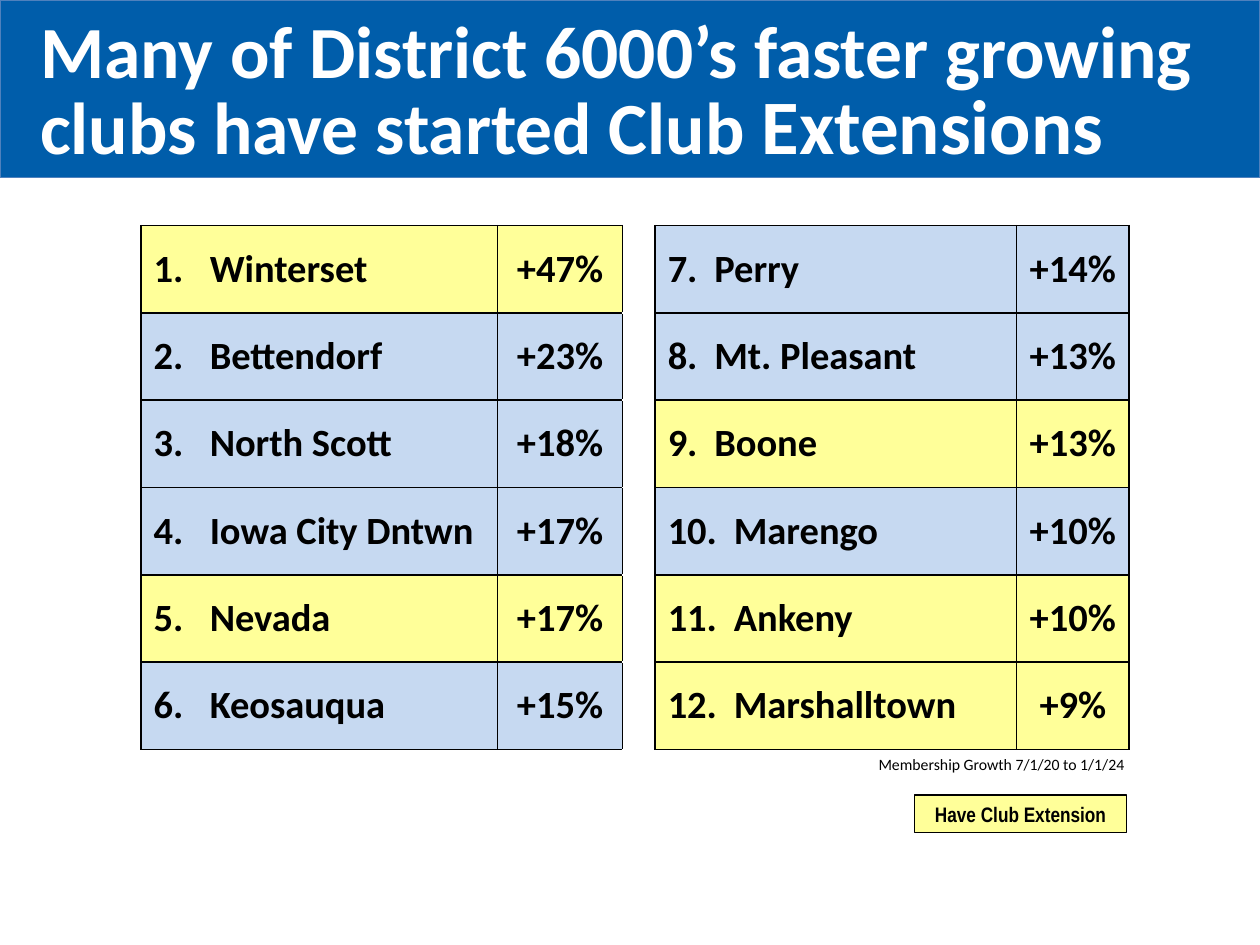
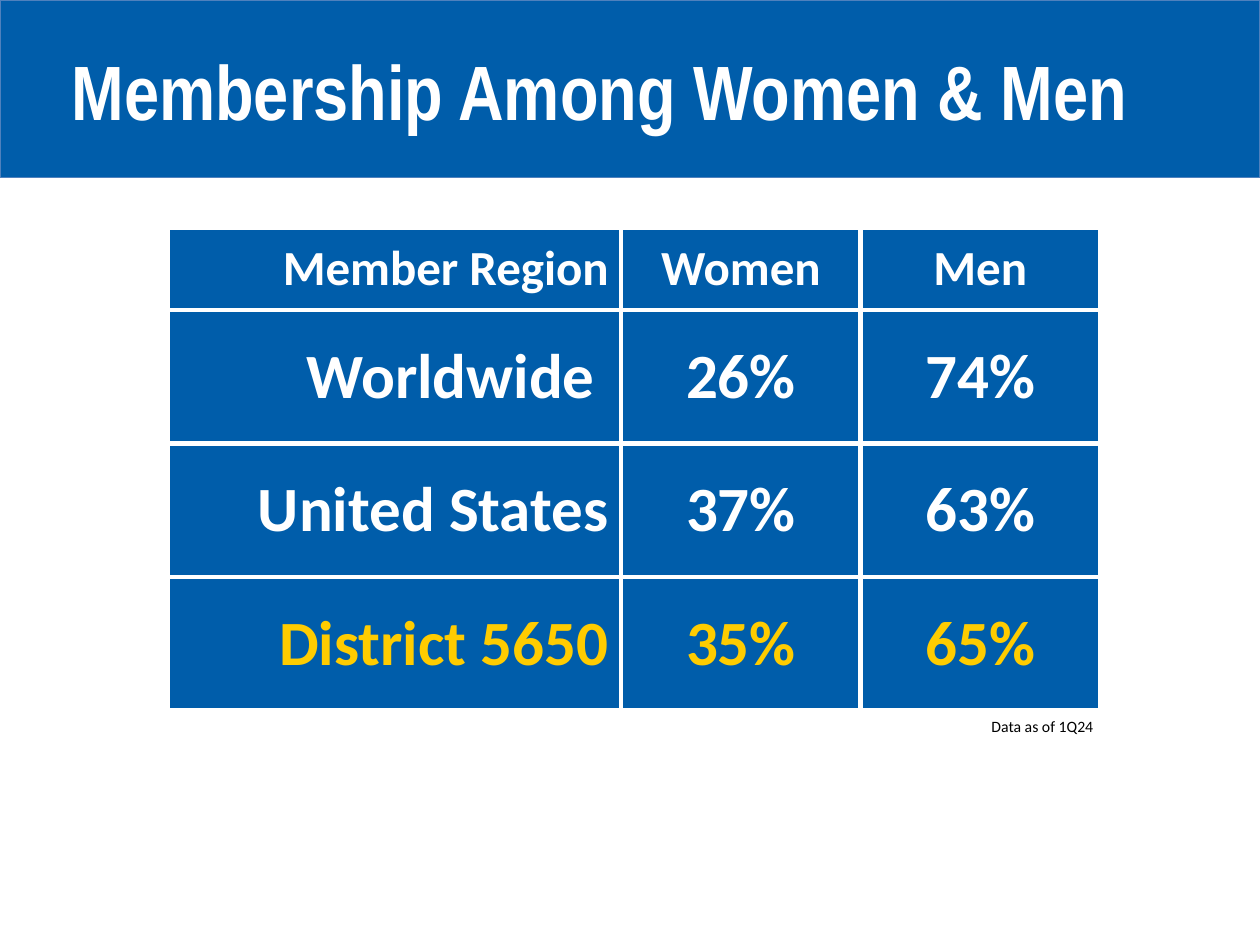
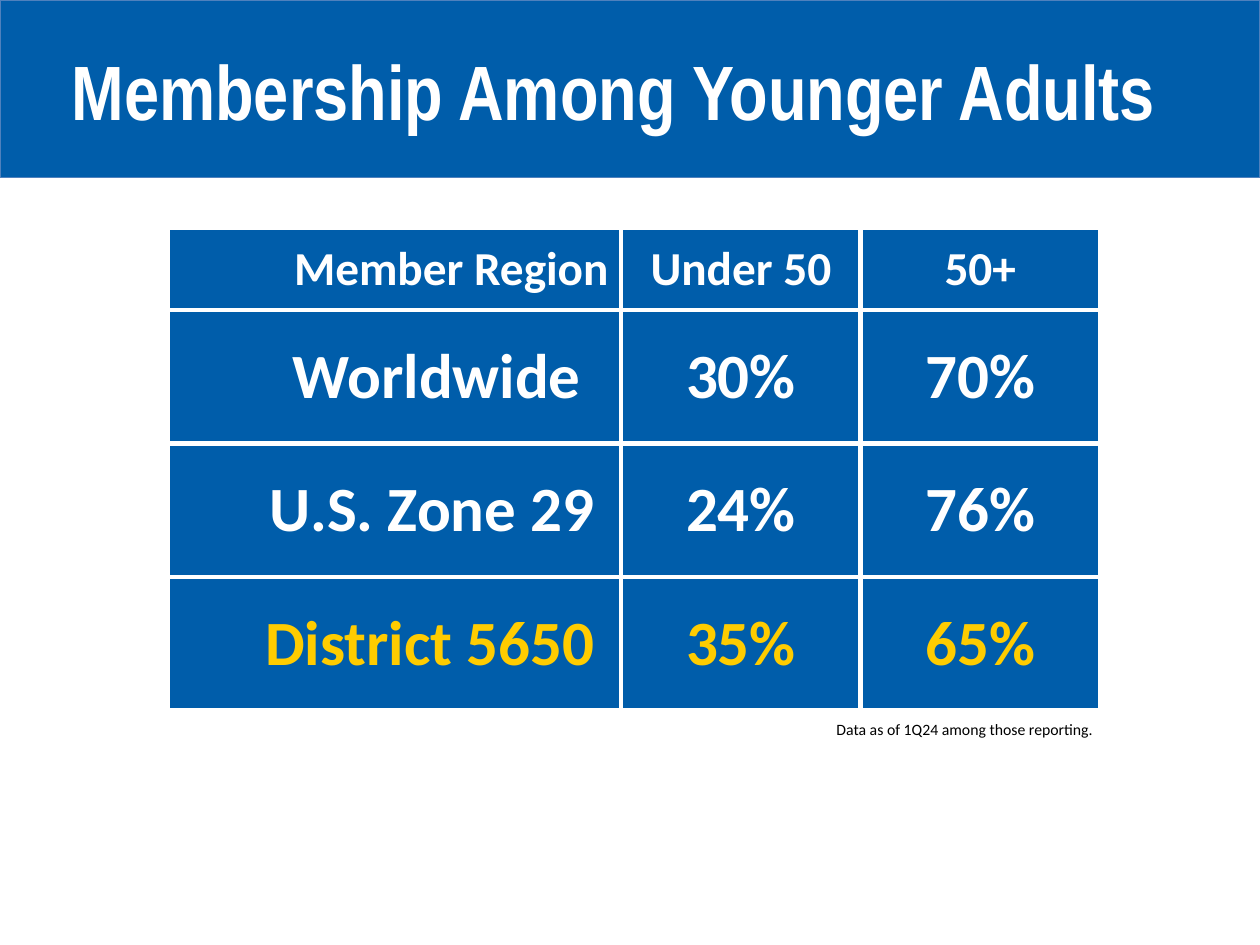
from dataclasses import dataclass
from typing import Optional

from lxml.etree import SubElement
from pptx import Presentation
from pptx.dml.color import RGBColor
from pptx.enum.shapes import MSO_SHAPE as SHAPE
from pptx.enum.text import MSO_ANCHOR as ANCHOR, PP_ALIGN as ALIGN
from pptx.oxml.ns import qn
from pptx.util import Inches, Pt

# Shared look
BLUE, EDGE, PALE, YELLOW = "005DAA", "4F81BD", "C6D9F1", "FFFF99"
GOLD, WHITE, BLACK = "FFCC00", "FFFFFF", "000000"
BODY, NARROW = "Calibri", "Arial Narrow"

# The slide is a grid of 100 columns by 75 rows
COLS, ROWS = 100, 75
UNIT = 0.1
CELL_PAD = 1
SPACE = 1.1


@dataclass(frozen=True)
class Box:
    left: float
    top: float
    width: float
    height: float

    def emu(self) -> tuple:
        return tuple(grid(n) for n in (self.left, self.top, self.width, self.height))


@dataclass(frozen=True)
class Style:
    size: float
    color: str = BLACK
    bold: bool = False
    font: str = BODY
    align: Optional[ALIGN] = None


@dataclass(frozen=True)
class Club:
    name: str
    growth: int
    extension: bool = False


@dataclass(frozen=True)
class Region:
    name: str
    share: int
    rest: int
    inset: int = 0


@dataclass(frozen=True)
class RegionSlide:
    title: str
    headers: tuple
    header_size: float
    regions: tuple
    note: str
    note_box: Box


BAND = Box(0, 0, COLS, 14.1)
TITLE_BOX = Box(4.7, 3, 93.4, 8.4)
TITLE = Style(44, WHITE, True, NARROW)
NOTE = Style(9)

CLUBS = (
    Club("Winterset", 47, True), Club("Bettendorf", 23), Club("North Scott", 18),
    Club("Iowa City Dntwn", 17), Club("Nevada", 17, True), Club("Keosauqua", 15),
    Club("Perry", 14), Club("Mt. Pleasant", 13), Club("Boone", 13, True),
    Club("Marengo", 10), Club("Ankeny", 10, True), Club("Marshalltown", 9, True),
)
CLUB_ROWS = 6

REGION_SLIDES = (
    RegionSlide(
        "Membership Among Women & Men", ("Member Region", "Women", "Men"), 28,
        (Region("Worldwide", 26, 74, 1), Region("United States", 37, 63),
         Region("District 5650", 35, 65)),
        "Data as of 1Q24", Box(77.7, 56.4, 12.2, 2.5)),
    RegionSlide(
        "Membership Among Younger Adults", ("Member Region", "Under 50", "50+"), 27,
        (Region("Worldwide", 30, 70, 2), Region("U.S. Zone 29", 24, 76, 1),
         Region("District 5650", 35, 65, 1)),
        "Data as of 1Q24 among those reporting.", Box(65.4, 56.6, 22.8, 2.5)),
)


def grid(n: float) -> int:
    return Inches(n * UNIT)


def rgb(color: str) -> RGBColor:
    return RGBColor.from_string(color)


def write(p, text: str, style: Style) -> None:
    p.add_run().text = text
    p.alignment = style.align
    f = p.font
    f.name, f.size, f.bold = style.font, Pt(style.size), style.bold
    f.color.rgb = rgb(style.color)


def add_rect(slide, box: Box, fill: str, line: str):
    sp = slide.shapes.add_shape(SHAPE.RECTANGLE, *box.emu())
    sp.shadow.inherit = False
    sp.fill.solid()
    sp.fill.fore_color.rgb = rgb(fill)
    sp.line.color.rgb = rgb(line)
    sp.line.width = Pt(0.75)
    return sp


def add_text(slide, box: Box, text: str, style: Style):
    tf = slide.shapes.add_textbox(*box.emu()).text_frame
    tf.word_wrap = True
    write(tf.paragraphs[0], text, style)
    return tf.paragraphs[0]


def add_banded_slide(prs):
    slide = prs.slides.add_slide(prs.slide_layouts[6])
    add_rect(slide, BAND, BLUE, EDGE)
    return slide


# Tables
def add_grid_table(slide, left: float, top: float, widths: tuple, heights: tuple):
    box = Box(left, top, sum(widths), sum(heights))
    table = slide.shapes.add_table(len(heights), len(widths), *box.emu()).table
    table.first_row = table.horz_banding = False
    for column, width in zip(table.columns, widths):
        column.width = grid(width)
    for row, height in zip(table.rows, heights):
        row.height = grid(height)
    return table


def set_borders(cell, sides: str, across: str, width: float) -> None:
    """Colour the left and right edges, then the top and bottom ones."""
    tc_pr = cell._tc.get_or_add_tcPr()
    for edge, color in (("L", sides), ("R", sides), ("T", across), ("B", across)):
        ln = SubElement(tc_pr, qn(f"a:ln{edge}"), w=str(Pt(width)))
        fill = SubElement(ln, qn("a:solidFill"))
        SubElement(fill, qn("a:srgbClr"), val=color)


def fill_cell(cell, text: str, style: Style, fill: str, line: str, width: float,
              tab: float = 0) -> None:
    set_borders(cell, line, line, width)
    cell.fill.solid()
    cell.fill.fore_color.rgb = rgb(fill)
    cell.vertical_anchor = ANCHOR.MIDDLE
    p = cell.text_frame.paragraphs[0]
    if tab:
        tabs = SubElement(p._p.get_or_add_pPr(), qn("a:tabLst"))
        SubElement(tabs, qn("a:tab"), pos=str(grid(tab)), algn="l")
    write(p, text, style)


def add_club_table(slide) -> None:
    table = add_grid_table(slide, 11.2, 17.9, (28.3, 9.9, 2.6, 28.7, 8.9),
                           (6.93,) * CLUB_ROWS)
    name_style = Style(22, BLACK, True)
    growth_style = Style(22, BLACK, True, align=ALIGN.CENTER)
    for i, club in enumerate(CLUBS):
        half, row = divmod(i, CLUB_ROWS)
        col = 3 * half
        tab = 4.45 if half == 0 else 3.7 if i < 9 else 5.25
        fill = YELLOW if club.extension else PALE
        fill_cell(table.cell(row, col), f"{i + 1}.\t{club.name}", name_style,
                  fill, BLACK, 1, tab)
        fill_cell(table.cell(row, col + 1), f"+{club.growth}%", growth_style,
                  fill, BLACK, 1)
    for row in range(CLUB_ROWS):
        gap = table.cell(row, 2)
        set_borders(gap, BLACK, WHITE, 1)
        gap.fill.background()


def add_region_table(slide, data: RegionSlide) -> None:
    table = add_grid_table(slide, 13.3, 18.1, (36, 19, 19), (6.5, 10.6, 10.6, 10.6))
    rows = [data.headers]
    rows += [(r.name, f"{r.share}%", f"{r.rest}%") for r in data.regions]
    for i, row in enumerate(rows):
        size = 36 if i else data.header_size
        color = GOLD if i == len(rows) - 1 else WHITE
        for j, text in enumerate(row):
            style = Style(size, color, True, align=ALIGN.CENTER if j else ALIGN.RIGHT)
            fill_cell(table.cell(i, j), text, style, BLUE, WHITE, 3)
    for i, region in enumerate(data.regions, 1):
        table.cell(i, 0).margin_right = grid(CELL_PAD + SPACE * region.inset)


# Slides
def build_club_slide(prs) -> None:
    slide = add_banded_slide(prs)
    p = add_text(slide, Box(2.2, 0.8, 96.2, 13.4),
                 "Many of District 6000’s faster growing clubs have started Club ",
                 Style(42, WHITE, True))
    p.line_spacing = Pt(44)
    r = p.add_run()
    r.text = "Extensions"
    r.font.size = Pt(44)
    add_club_table(slide)
    legend = add_rect(slide, Box(72.6, 63.1, 16.8, 3), YELLOW, BLACK)
    legend.text_frame.vertical_anchor = ANCHOR.MIDDLE
    write(legend.text_frame.paragraphs[0], "Have Club Extension",
          Style(12, BLACK, True, NARROW, ALIGN.CENTER))
    add_text(slide, Box(54, 59.4, 36.2, 2.5), "Membership Growth 7/1/20 to 1/1/24",
             Style(9, align=ALIGN.RIGHT))


def build_region_slide(prs, data: RegionSlide) -> None:
    slide = add_banded_slide(prs)
    add_region_table(slide, data)
    add_text(slide, TITLE_BOX, data.title, TITLE)
    add_text(slide, data.note_box, data.note, NOTE)


def main() -> None:
    prs = Presentation()
    prs.slide_width, prs.slide_height = grid(COLS), grid(ROWS)
    build_club_slide(prs)
    for data in REGION_SLIDES:
        build_region_slide(prs, data)
    prs.save("out.pptx")


if __name__ == "__main__":
    main()
